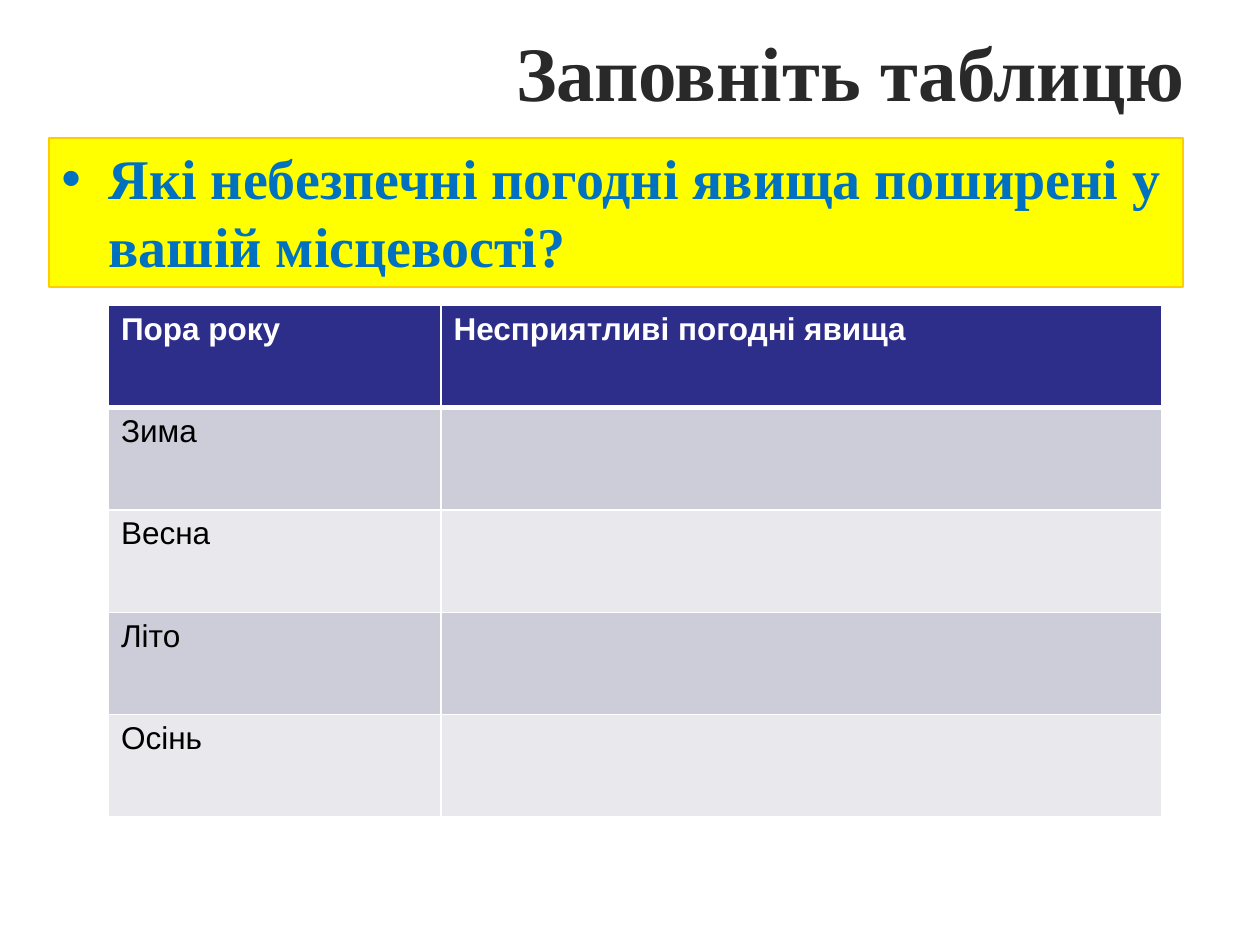
from lxml.etree import SubElement
from pptx import Presentation
from pptx.dml.color import RGBColor as Rgb
from pptx.enum.shapes import MSO_SHAPE as Shape
from pptx.enum.text import MSO_ANCHOR as Anchor, PP_ALIGN as Align
from pptx.oxml import parse_xml
from pptx.oxml.ns import nsdecls, qn
from pptx.util import Pt

TITLE = "Заповніть таблицю"
QUESTION = "Які небезпечні погодні явища поширені у вашій місцевості?"
HEADER = ("Пора року", "Несприятливі погодні явища")
SEASONS = ("Зима", "Весна", "Літо", "Осінь")
COLORS = {
    "title": "292929", "question": "0070C0", "panel": "FFFF00", "edge": "FFCC00",
    "header": "2D2D8A", "odd": "CDCDDA", "even": "E8E8ED",
    "white": "FFFFFF", "black": "000000",
}
SERIF, SANS = "Times New Roman", "Arial"
COLUMN_WIDTHS = (190, 412)
ROW_HEIGHT = 58.5
BULLET_INDENT = 27


def color(name):
    return Rgb.from_string(COLORS[name])


def style(para, font_name, size, color_name, bold):
    for span in para.runs:
        span.font.name = font_name
        span.font.size = Pt(size)
        span.font.bold = bold
        span.font.color.rgb = color(color_name)


def add_bullet(para):
    props = para._p.get_or_add_pPr()
    props.set("marL", str(Pt(BULLET_INDENT)))
    props.set("indent", str(-Pt(BULLET_INDENT)))
    SubElement(props, qn("a:buFont"), typeface=SANS)
    SubElement(props, qn("a:buChar"), char="•")


def set_borders(cell, top, bottom):
    props = cell._tc.get_or_add_tcPr()
    widths = {"lnL": 1, "lnR": 1, "lnT": top, "lnB": bottom}
    for position, (side, width) in enumerate(widths.items()):
        props.insert(position, parse_xml(
            f'<a:{side} {nsdecls("a")} w="{Pt(width)}"><a:solidFill>'
            f'<a:srgbClr val="{COLORS["white"]}"/></a:solidFill></a:{side}>'))


def add_title(page):
    box = page.shapes.add_textbox(Pt(161.5), Pt(3.5), Pt(523), Pt(73.5))
    frame = box.text_frame
    frame.word_wrap = True
    frame.vertical_anchor = Anchor.MIDDLE
    frame.text = TITLE
    para = frame.paragraphs[0]
    para.alignment = Align.RIGHT
    style(para, SERIF, 44, "title", True)


def add_question(page):
    panel = page.shapes.add_shape(
        Shape.RECTANGLE, Pt(28), Pt(78.75), Pt(648), Pt(85.5))
    panel.shadow.inherit = False
    panel.fill.solid()
    panel.fill.fore_color.rgb = color("panel")
    panel.line.color.rgb = color("edge")
    panel.line.width = Pt(1)
    frame = panel.text_frame
    frame.word_wrap = True
    frame.vertical_anchor = Anchor.TOP
    frame.text = QUESTION
    para = frame.paragraphs[0]
    para.alignment = Align.LEFT
    add_bullet(para)
    style(para, SERIF, 32, "question", True)


def add_season_table(page):
    rows = [HEADER] + [(season, "") for season in SEASONS]
    table = page.shapes.add_table(
        len(rows), len(HEADER), Pt(62), Pt(174.5),
        Pt(sum(COLUMN_WIDTHS)), Pt(ROW_HEIGHT * len(rows))).table
    for column, width in zip(table.columns, COLUMN_WIDTHS):
        column.width = Pt(width)
    for number, texts in enumerate(rows):
        table.rows[number].height = Pt(ROW_HEIGHT)
        is_header = number == 0
        fill = "header" if is_header else ("even", "odd")[number % 2]
        for column, text in enumerate(texts):
            cell = table.cell(number, column)
            cell.text = text
            cell.fill.solid()
            cell.fill.fore_color.rgb = color(fill)
            style(cell.text_frame.paragraphs[0], SANS, 18,
                  "white" if is_header else "black", is_header)
            set_borders(cell, top=3 if number == 1 else 1,
                        bottom=3 if is_header else 1)


def main():
    deck = Presentation()
    deck.slide_width, deck.slide_height = Pt(720), Pt(540)
    page = deck.slides.add_slide(deck.slide_layouts[6])
    add_title(page)
    add_question(page)
    add_season_table(page)
    deck.save("out.pptx")


if __name__ == "__main__":
    main()
